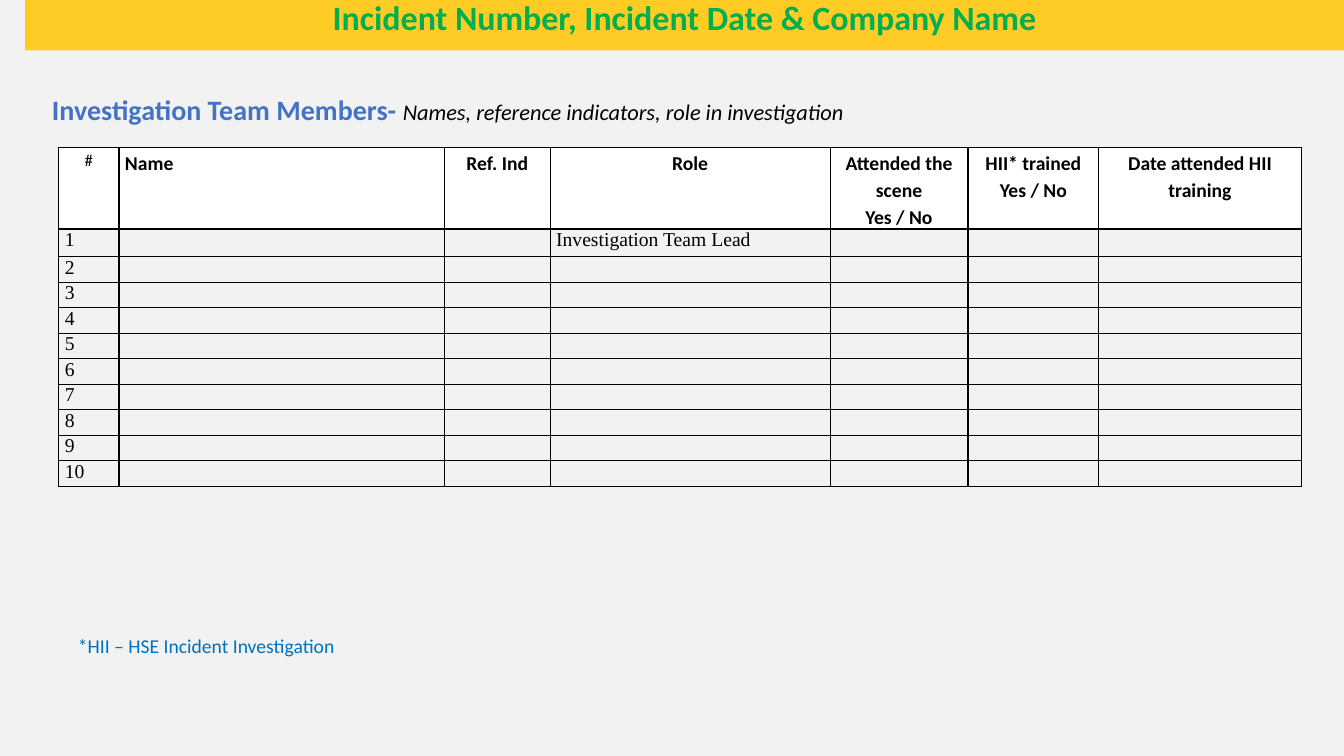
from dataclasses import dataclass

from lxml.etree import SubElement
from pptx import Presentation
from pptx.dml.color import RGBColor
from pptx.enum.text import MSO_ANCHOR, PP_ALIGN
from pptx.oxml.ns import qn
from pptx.util import Pt


@dataclass(frozen=True)
class Theme:
    background: str = "F2F2F2"
    banner: str = "FFCB25"
    title: str = "00B050"
    heading: str = "4472C4"
    note: str = "0070C0"
    ink: str = "000000"
    header_fill: str = "FFFFFF"
    sans: str = "Calibri"
    serif: str = "Times New Roman"
    title_size: float = 24.3
    heading_size: float = 20
    hint_size: float = 16
    text_size: float = 14
    number_sign_size: float = 12


THEME = Theme()
COLUMN_WIDTHS = [43, 232.5, 75.5, 200, 98.5, 93.5, 144.5]
ROW_HEIGHTS = [57.6, 19.8] + [18.25] * 9
HEADERS = ["#", "Name", "Ref. Ind", "Role", "Attended the scene\nYes / No",
           "HII* trained\nYes / No", "Date attended HII training"]
ROLES = {1: "Investigation Team Lead"}


def apply_format(target, values):
    for name, value in values.items():
        setattr(target, name, value)


def fill_solid(fill, color):
    fill.solid()
    fill.fore_color.rgb = RGBColor.from_string(color)


def add_text(paragraph, text, color, **font_values):
    run = paragraph.add_run()
    run.text = text
    apply_format(run.font, {"name": THEME.sans, "bold": False, **font_values})
    run.font.color.rgb = RGBColor.from_string(color)


def add_title(slide, text):
    title = slide.shapes.title
    apply_format(title, {"left": Pt(18), "top": Pt(0), "width": Pt(942), "height": Pt(36)})
    fill_solid(title.fill, THEME.banner)
    # The deeper bottom margin lifts the text within the banner
    apply_format(title.text_frame, {
        "margin_top": Pt(0), "margin_bottom": Pt(8),
        "vertical_anchor": MSO_ANCHOR.MIDDLE, "word_wrap": True})
    paragraph = title.text_frame.paragraphs[0]
    apply_format(paragraph, {"alignment": PP_ALIGN.CENTER, "line_spacing": 0.9})
    add_text(paragraph, text, THEME.title, size=Pt(THEME.title_size), bold=True)


def add_text_line(slide, left, top, width, height):
    box = slide.shapes.add_textbox(Pt(left), Pt(top), Pt(width), Pt(height))
    box.text_frame.word_wrap = True
    return box.text_frame.paragraphs[0]


def add_borders(cell):
    properties = cell._tc.get_or_add_tcPr()
    for side in ("a:lnL", "a:lnR", "a:lnT", "a:lnB"):
        line = SubElement(properties, qn(side), w=str(Pt(1)))
        SubElement(SubElement(line, qn("a:solidFill")), qn("a:srgbClr"), val=THEME.ink)


def format_cell(cell):
    apply_format(cell, {"margin_left": Pt(4.3), "margin_right": Pt(4.3),
                        "margin_top": Pt(0), "margin_bottom": Pt(0)})
    add_borders(cell)


def fill_header_cell(cell, text):
    format_cell(cell)
    fill_solid(cell.fill, THEME.header_fill)
    is_sign = text == "#"
    size = THEME.number_sign_size if is_sign else THEME.text_size
    for index, line in enumerate(text.split("\n")):
        frame = cell.text_frame
        paragraph = frame.add_paragraph() if index else frame.paragraphs[0]
        paragraph.alignment = PP_ALIGN.LEFT if text == "Name" else PP_ALIGN.CENTER
        paragraph.line_spacing = 1.15
        add_text(paragraph, line, THEME.ink, size=Pt(size), bold=not is_sign)


def fill_body_cell(cell, text):
    format_cell(cell)
    cell.fill.background()
    paragraph = cell.text_frame.paragraphs[0]
    if text:
        add_text(paragraph, text, THEME.ink, name=THEME.serif, size=Pt(THEME.text_size))
    else:
        # Keeps empty cells from stretching their row
        SubElement(paragraph._p, qn("a:endParaRPr"), sz=str(THEME.text_size * 100))


def add_team_table(slide):
    table = slide.shapes.add_table(
        len(ROW_HEIGHTS), len(COLUMN_WIDTHS), Pt(42), Pt(105.6),
        Pt(sum(COLUMN_WIDTHS)), Pt(sum(ROW_HEIGHTS))).table
    apply_format(table, {"first_row": False, "horz_banding": False})
    for column, width in zip(table.columns, COLUMN_WIDTHS):
        column.width = Pt(width)
    for row, height in zip(table.rows, ROW_HEIGHTS):
        row.height = Pt(height)
    for column, header in enumerate(HEADERS):
        fill_header_cell(table.cell(0, column), header)
        for number in range(1, len(ROW_HEIGHTS)):
            texts = {"#": str(number), "Role": ROLES.get(number, "")}
            fill_body_cell(table.cell(number, column), texts.get(header, ""))


def main():
    presentation = Presentation()
    apply_format(presentation, {"slide_width": Pt(960), "slide_height": Pt(540)})
    slide = presentation.slides.add_slide(presentation.slide_layouts[5])
    fill_solid(slide.background.fill, THEME.background)

    # Banner
    add_title(slide, "Incident Number, Incident Date & Company Name")

    # Section heading
    heading = add_text_line(slide, 30, 62.6, 660, 31.5)
    add_text(heading, "Investigation Team Members- ", THEME.heading,
             size=Pt(THEME.heading_size), bold=True)
    add_text(heading, "Names, reference indicators, role in investigation", THEME.ink,
             size=Pt(THEME.hint_size), italic=True)

    # Team members
    add_team_table(slide)

    # Footnote
    note = add_text_line(slide, 48.5, 449.5, 240, 24.2)
    add_text(note, "*HII – HSE Incident Investigation", THEME.note, size=Pt(THEME.text_size))

    presentation.save("out.pptx")


if __name__ == "__main__":
    main()
